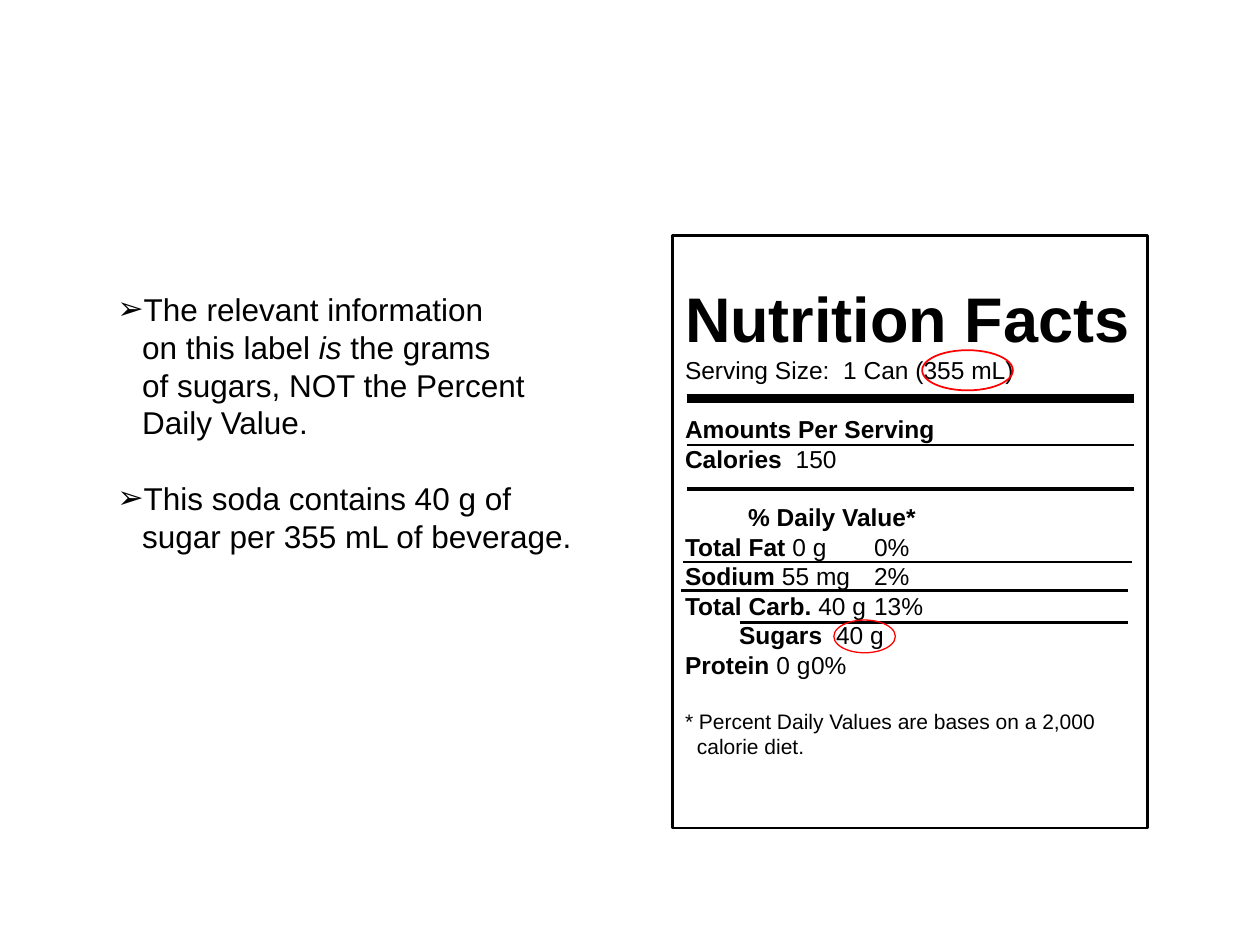
from lxml import etree
from pptx import Presentation
from pptx.dml.color import RGBColor
from pptx.enum.shapes import MSO_CONNECTOR, MSO_SHAPE
from pptx.enum.text import MSO_ANCHOR, MSO_AUTO_SIZE, PP_ALIGN
from pptx.oxml.ns import qn
from pptx.util import Cm, Pt

RECTANGLE, OVAL = MSO_SHAPE.RECTANGLE, MSO_SHAPE.OVAL
STRAIGHT = MSO_CONNECTOR.STRAIGHT
TOP, LEFT = MSO_ANCHOR.TOP, PP_ALIGN.LEFT
NO_AUTOFIT = MSO_AUTO_SIZE.NONE

BLACK = RGBColor(0, 0, 0)
RED = RGBColor(255, 0, 0)
FONT = "Arial"
LINE_PITCH = 1.2
VALUE_TAB = 8.89
BULLET_INDENT = 0.5

# Each run is (text, format values).
BOLD, PLAIN, ITALIC = {"bold": True}, {"bold": False}, {"italic": True}

ADVICE = [
    [("The relevant information\von this label ", PLAIN), ("is", ITALIC),
     (" the grams\vof sugars, NOT the Percent\vDaily Value.", PLAIN)],
    [("This soda contains 40 g of\vsugar per 355 mL of beverage.", PLAIN)],
]

# Each line is (runs, layout values that differ from the default).
LABEL_LINES = [
    ([("Nutrition Facts", BOLD)], {"size": 36}),
    ([("Serving Size:  1 Can (355 mL)", PLAIN)], {}),
    ([("Amounts Per Serving", BOLD)], {"before": 16.8}),
    ([("Calories  ", BOLD), ("150", PLAIN)], {}),
    ([("\t% Daily Value*", BOLD)], {"before": 16.8, "tab": 9}),
    ([("Total Fat ", BOLD), ("0 g\t0%", PLAIN)], {"tab": VALUE_TAB}),
    ([("Sodium ", BOLD), ("55 mg\t2%", PLAIN)], {"tab": VALUE_TAB}),
    ([("Total Carb. ", BOLD), ("40 g\t13%", PLAIN)], {"tab": VALUE_TAB}),
    ([("Sugars  ", BOLD), ("40 g", PLAIN)], {"margin": 1.09}),
    ([("Protein ", BOLD), ("0 g\t0%", PLAIN)], {"tab": VALUE_TAB}),
    ([("* Percent Daily Values are bases on a 2,000 calorie diet.", PLAIN)],
     {"size": 12, "before": 16.8, "margin": 0.24, "indent": -0.24}),
]

# left, right, y in cm and width in points
RULES = [
    (13.84, 22.86, 8.03, 4.75),
    (13.84, 22.86, 8.97, 1.5),
    (13.84, 22.86, 9.86, 2.5),
    (13.77, 22.81, 11.33, 1.5),
    (13.72, 22.73, 11.91, 1.5),
    (14.91, 22.73, 12.55, 1.5),
]


def set_values(target, values):
    for name, value in values.items():
        setattr(target, name, value)


def add_paragraph_child(paragraph, tag, **attributes):
    properties = paragraph._p.get_or_add_pPr()
    return etree.SubElement(properties, qn(tag), attributes)


def write_paragraph(paragraph, runs, size=14, before=0, margin=0, indent=0,
                    tab=None, bullet=None):
    """Fill a paragraph; sizes are points, margin, indent and tab are cm."""
    set_values(paragraph, {
        "alignment": LEFT,
        "line_spacing": Pt(size * LINE_PITCH),
        "space_before": Pt(before),
        "space_after": Pt(0),
    })
    properties = paragraph._p.get_or_add_pPr()
    properties.set("marL", str(Cm(margin)))
    properties.set("indent", str(Cm(indent)))
    if bullet:
        add_paragraph_child(paragraph, "a:buChar", char=bullet)
    if tab:
        tabs = add_paragraph_child(paragraph, "a:tabLst")
        etree.SubElement(tabs, qn("a:tab"), {"pos": str(Cm(tab)), "algn": "r"})
    for text, values in runs:
        for number, part in enumerate(text.split("\v")):
            if number:
                paragraph.add_line_break()
            run = paragraph.add_run()
            run.text = part
            set_values(run.font, {"name": FONT, "size": Pt(size), **values})
            run.font.color.rgb = BLACK


def write_paragraphs(frame, lines):
    for number, (runs, layout) in enumerate(lines):
        paragraph = frame.add_paragraph() if number else frame.paragraphs[0]
        write_paragraph(paragraph, runs, **layout)


def add_outline(slide, kind, left, top, width, height, color, weight):
    shape = slide.shapes.add_shape(
        kind, Cm(left), Cm(top), Cm(width), Cm(height))
    shape.shadow.inherit = False
    shape.fill.background()
    shape.line.color.rgb = color
    shape.line.width = Pt(weight)
    return shape


def add_rule(slide, left, right, y, weight):
    rule = slide.shapes.add_connector(
        STRAIGHT, Cm(left), Cm(y), Cm(right), Cm(y))
    rule.line.color.rgb = BLACK
    rule.line.width = Pt(weight)
    etree.SubElement(rule._element.spPr, qn("a:effectLst"))


def add_nutrition_label(slide):
    label = add_outline(slide, RECTANGLE, 13.56, 4.75, 9.58, 11.94, BLACK, 1.5)
    frame = label.text_frame
    set_values(frame, {"word_wrap": True, "vertical_anchor": TOP,
                       "margin_top": Cm(0.89)})
    write_paragraphs(frame, LABEL_LINES)
    for rule in RULES:
        add_rule(slide, *rule)


def fill_advice(body):
    set_values(body, {"left": Cm(2.11), "top": Cm(5.72),
                      "width": Cm(9.91), "height": Cm(5.59)})
    frame = body.text_frame
    set_values(frame, {"word_wrap": True, "vertical_anchor": TOP,
                       "auto_size": NO_AUTOFIT})
    write_paragraphs(frame, [
        (runs, {"size": 18, "before": 21.6 if number else 0, "bullet": "➢",
                "margin": BULLET_INDENT, "indent": -BULLET_INDENT})
        for number, runs in enumerate(ADVICE)
    ])


def main():
    presentation = Presentation()
    presentation.slide_width = Cm(25.4)
    presentation.slide_height = Cm(19.05)
    slide = presentation.slides.add_slide(presentation.slide_layouts[1])
    title = slide.shapes.title._element
    title.getparent().remove(title)

    add_nutrition_label(slide)
    fill_advice(slide.placeholders[1])
    add_outline(slide, OVAL, 18.59, 7.06, 1.83, 0.81, RED, 1)
    add_outline(slide, OVAL, 16.81, 12.5, 1.24, 0.66, RED, 0.75)
    presentation.save("out.pptx")


if __name__ == "__main__":
    main()
